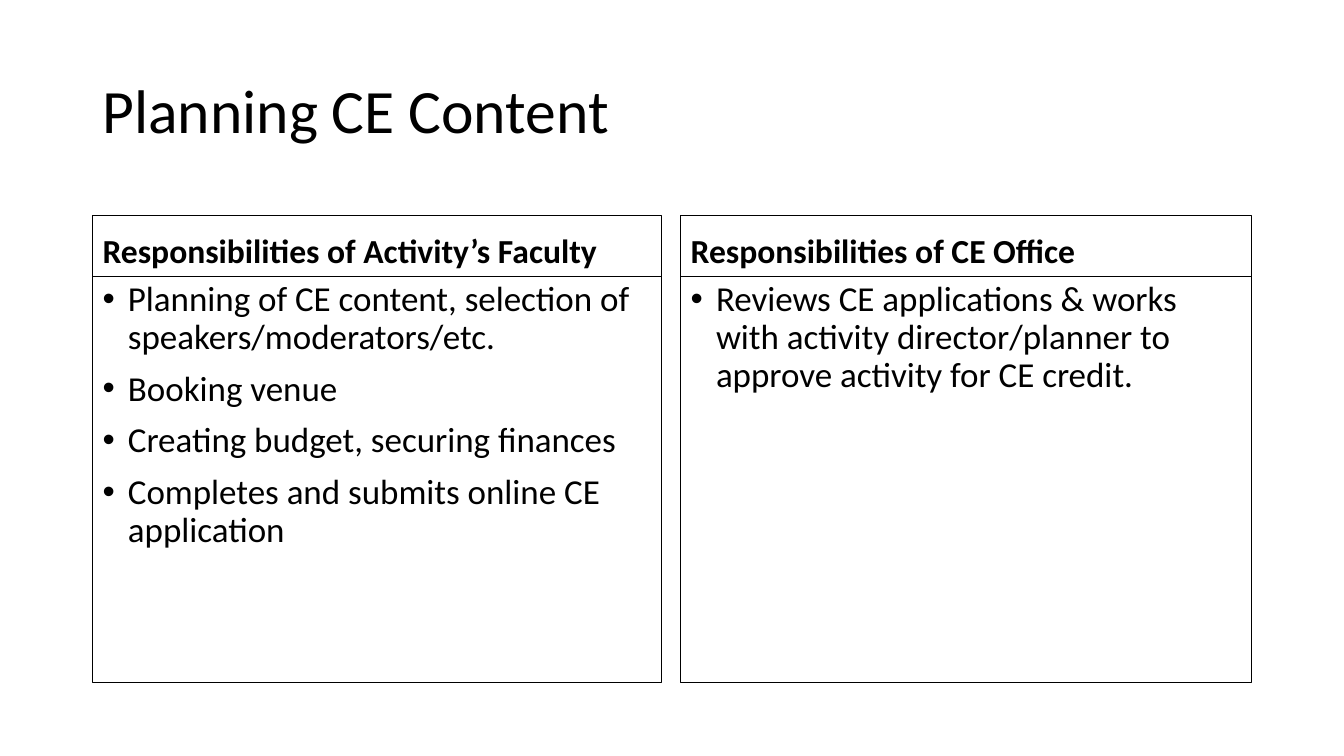
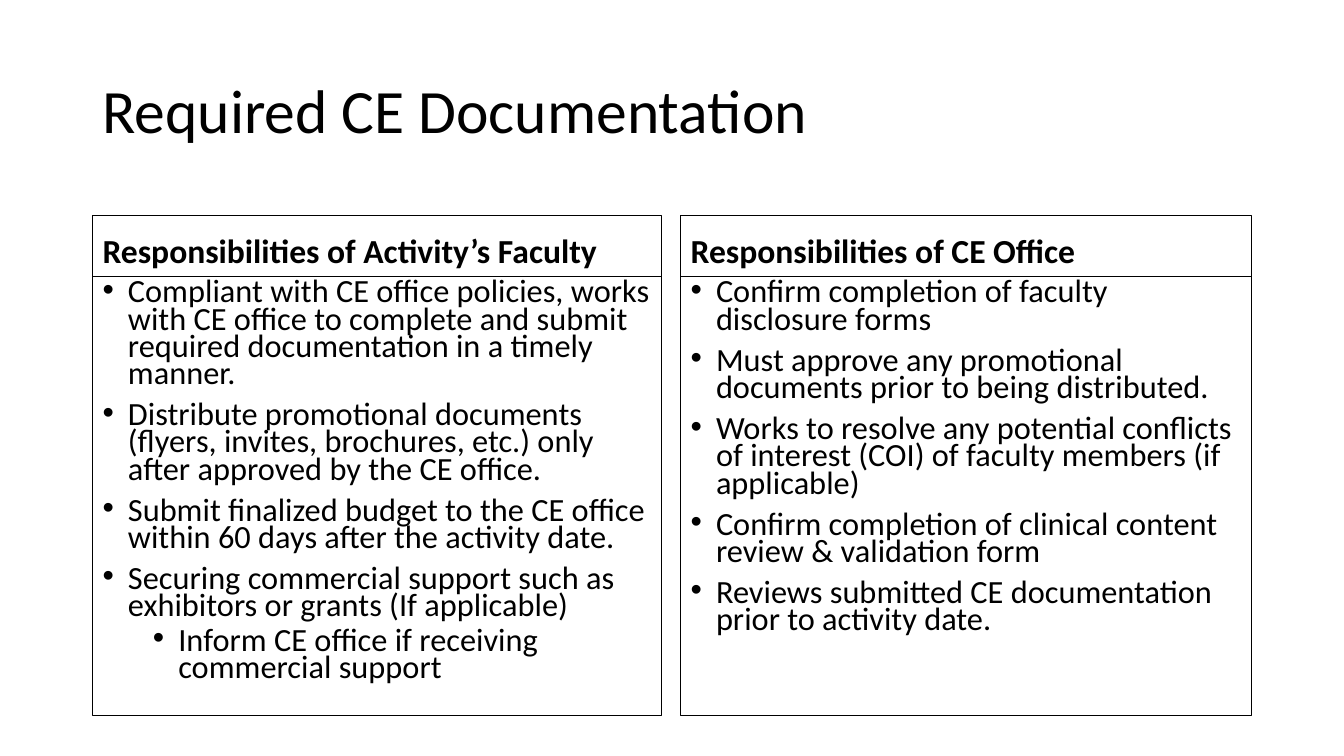
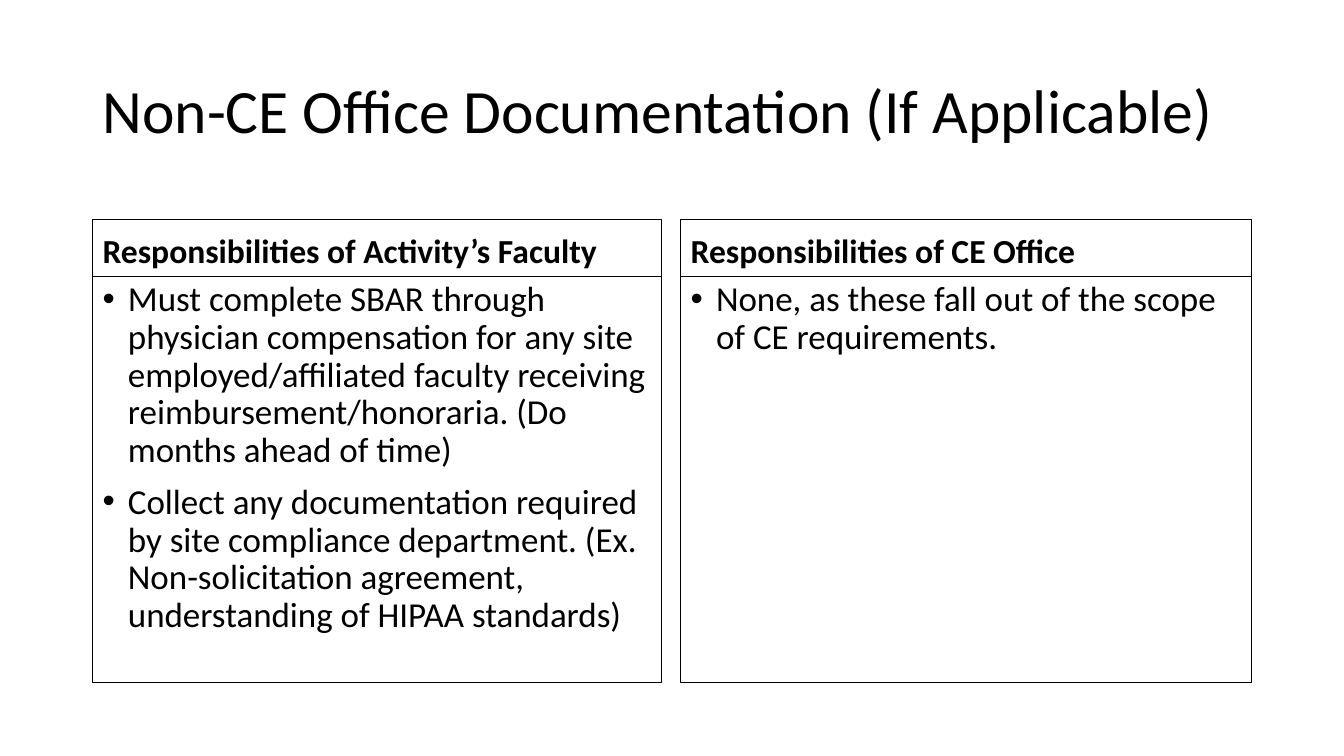
from lxml import etree
from pptx import Presentation
from pptx.dml.color import RGBColor
from pptx.enum.text import MSO_ANCHOR, MSO_AUTO_SIZE, PP_ALIGN
from pptx.oxml.ns import qn
from pptx.util import Cm, Pt

TOP, MIDDLE, BOTTOM = MSO_ANCHOR.TOP, MSO_ANCHOR.MIDDLE, MSO_ANCHOR.BOTTOM
LEFT = PP_ALIGN.LEFT
NO_FIT = MSO_AUTO_SIZE.NONE

FONT = "Calibri"
INK = "000000"
COMPARISON_LAYOUT = 4
TITLE_BOX = (2.33, 1.01, 29.21, 3.68)
COLUMNS = ((2.33, 14.33), (17.15, 14.39))
LIST_TOP = 6.96
HEADINGS = ("Responsibilities of Activity’s Faculty", "Responsibilities of CE Office")
INDENT_STEP = 1.27
HANGING = 0.64

NORMAL = {"heading_top": 5.42, "list_height": 10.24, "size": 25, "spacing": 0.9}
DENSE = {**NORMAL, "list_height": 11.07, "size": 23.1, "spacing": 0.7}
LOW_HEADING = {**NORMAL, "heading_top": 5.53}

SLIDES = (
    ("Planning CE Content", NORMAL, (
        (
            ("Planning of CE content, selection of speakers/moderators/etc.", 0),
            ("Booking venue", 0),
            ("Creating budget, securing finances", 0),
            ("Completes and submits online CE application", 0),
        ),
        (
            ("Reviews CE applications & works with activity director/planner to "
             "approve activity for CE credit.", 0),
        ),
    )),
    ("Required CE Documentation", DENSE, (
        (
            ("Compliant with CE office policies, works with CE office to complete "
             "and submit required documentation in a timely manner.", 0),
            ("Distribute promotional documents (flyers, invites, brochures, etc.) "
             "only after approved by the CE office.", 0),
            ("Submit finalized budget to the CE office within 60 days after the "
             "activity date.", 0),
            ("Securing commercial support such as exhibitors or grants "
             "(If applicable)", 0),
            ("Inform CE office if receiving commercial support", 1),
        ),
        (
            ("Confirm completion of faculty disclosure forms", 0),
            ("Must approve any promotional documents prior to being distributed.", 0),
            ("Works to resolve any potential conflicts of interest (COI) of "
             "faculty members (if applicable)", 0),
            ("Confirm completion of clinical content review & validation form", 0),
            ("Reviews submitted CE documentation prior to activity date.", 0),
        ),
    )),
    ("Non-CE Office Documentation (If Applicable)", LOW_HEADING, (
        (
            ("Must complete SBAR through physician compensation for any site "
             "employed/affiliated faculty receiving reimbursement/honoraria. "
             "(Do months ahead of time)", 0),
            ("Collect any documentation required by site compliance department. "
             "(Ex. Non-solicitation agreement, understanding of HIPAA standards)", 0),
        ),
        (
            ("None, as these fall out of the scope of CE requirements.", 0),
        ),
    )),
)


def colour(hex_value):
    return RGBColor.from_string(hex_value)


def apply_format(target, values):
    for name, value in values.items():
        setattr(target, name, value)


def place(holder, box, anchor):
    apply_format(holder, dict(zip(("left", "top", "width", "height"), map(Cm, box))))
    apply_format(holder.text_frame, {
        "word_wrap": True, "auto_size": NO_FIT, "vertical_anchor": anchor})


def outline(holder):
    holder.line.color.rgb = colour(INK)
    holder.line.width = Pt(0.75)


def write(paragraph, text, size, spacing=0.9, before=10, bold=False):
    run = paragraph.add_run()
    run.text = text
    apply_format(run.font, {"name": FONT, "size": Pt(size), "bold": bold})
    run.font.color.rgb = colour(INK)
    apply_format(paragraph, {
        "alignment": LEFT, "line_spacing": spacing,
        "space_before": Pt(before), "space_after": Pt(0)})


def add_bullet(paragraph, level):
    paragraph.level = level
    properties = paragraph._p.get_or_add_pPr()
    properties.set("marL", str(Cm(HANGING + INDENT_STEP * level)))
    properties.set("indent", str(-Cm(HANGING)))
    etree.SubElement(properties, qn("a:buFont"), typeface="Arial")
    etree.SubElement(properties, qn("a:buChar"), char="•")


def fill_title(holder, text):
    place(holder, TITLE_BOX, MIDDLE)
    write(holder.text_frame.paragraphs[0], text, 44, before=0)


def fill_heading(holder, text, box):
    place(holder, box, BOTTOM)
    outline(holder)
    write(holder.text_frame.paragraphs[0], text, 24, bold=True)


def fill_list(holder, items, box, size, spacing):
    place(holder, box, TOP)
    outline(holder)
    frame = holder.text_frame
    for index, (text, level) in enumerate(items):
        paragraph = frame.add_paragraph() if index else frame.paragraphs[0]
        write(paragraph, text, size, spacing, before=5 if level else 10)
        add_bullet(paragraph, level)


def add_comparison(deck, title, style, duties):
    slide = deck.slides.add_slide(deck.slide_layouts[COMPARISON_LAYOUT])
    title_holder, *holders = slide.placeholders
    fill_title(title_holder, title)
    heading_top = style["heading_top"]
    columns = zip(COLUMNS, HEADINGS, duties, holders[::2], holders[1::2])
    for (left, width), heading, items, heading_holder, list_holder in columns:
        fill_heading(heading_holder, heading,
                     (left, heading_top, width, LIST_TOP - heading_top))
        fill_list(list_holder, items, (left, LIST_TOP, width, style["list_height"]),
                  style["size"], style["spacing"])


def main():
    deck = Presentation()
    apply_format(deck, {"slide_width": Cm(33.87), "slide_height": Cm(19.05)})
    for title, style, duties in SLIDES:
        add_comparison(deck, title, style, duties)
    deck.save("out.pptx")


if __name__ == "__main__":
    main()
